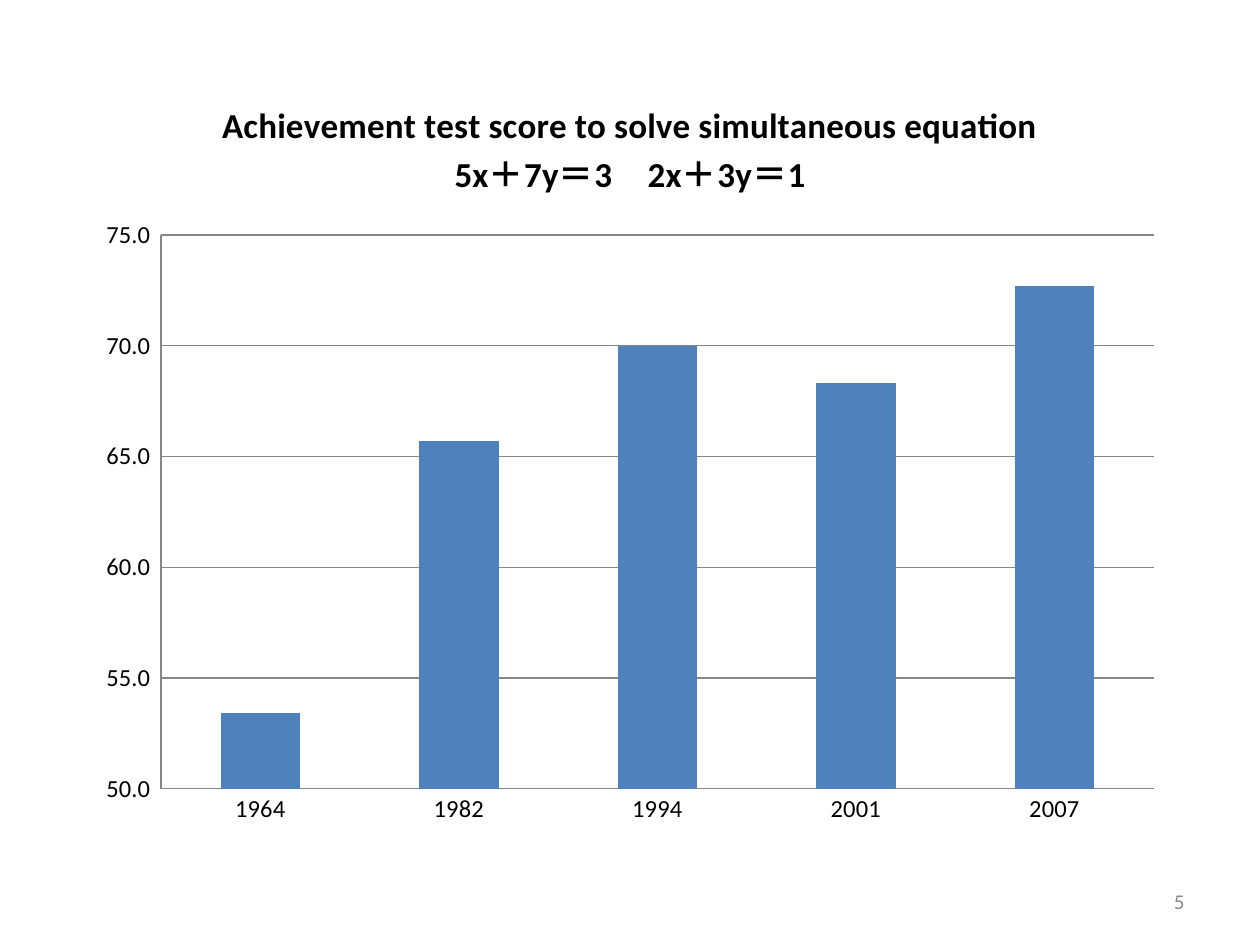
from pptx import Presentation
from pptx.chart.data import CategoryChartData
from pptx.dml.color import RGBColor
from pptx.enum.chart import XL_CHART_TYPE, XL_TICK_MARK
from pptx.enum.text import MSO_ANCHOR, PP_ALIGN
from pptx.util import Inches, Pt

WIDE, HIGH = 10, 7.5
FONT = "Calibri"
COLORS = {"text": "000000", "bar": "4F81BD", "line": "868686", "page": "8C8C8C"}
TITLE = ["Achievement test score to solve simultaneous equation", "5x＋7y＝3　2x＋3y＝1"]
SCORES = {"1964": 53.4, "1982": 65.7, "1994": 70, "2001": 68.3, "2007": 72.7}
PAGE = "5"
FORMAT = r"0.0_);[Red]\(0.0\)"
AREAS = {"chart": (0.067, 0.08, 0.866, 0.808), "page": (0.717, 0.927, 0.233, 0.053)}


def place(name):
    sides = (WIDE, HIGH, WIDE, HIGH)
    return [Inches(part * side) for part, side in zip(AREAS[name], sides)]


def color(name):
    return RGBColor.from_string(COLORS[name])


def style(font, size, name="text", bold=False):
    font.name, font.size, font.bold = FONT, Pt(size), bold
    font.color.rgb = color(name)


def rule(line):
    line.width = Pt(0.75)
    line.color.rgb = color("line")


def add_scores(slide):
    data = CategoryChartData(number_format="0.0")
    data.categories = list(SCORES)
    data.add_series("Series 1", list(SCORES.values()))
    kind = XL_CHART_TYPE.COLUMN_CLUSTERED
    chart = slide.shapes.add_chart(kind, *place("chart"), data).chart
    style(chart.font, 14)
    chart.has_legend = False

    chart.has_title = True
    frame = chart.chart_title.text_frame
    frame.text = "\n".join(TITLE)
    for para in frame.paragraphs:
        style(para.font, 20, bold=True)
        for run in para.runs:
            style(run.font, 20, bold=True)

    plot = chart.plots[0]
    plot.gap_width = 150
    plot.vary_by_categories = False
    fill = plot.series[0].format.fill
    fill.solid()
    fill.fore_color.rgb = color("bar")

    for axis in (chart.category_axis, chart.value_axis):
        axis.major_tick_mark = axis.minor_tick_mark = XL_TICK_MARK.NONE
        rule(axis.format.line)
    axis = chart.value_axis
    axis.minimum_scale, axis.maximum_scale, axis.major_unit = 50, 75, 5
    axis.has_major_gridlines = True
    rule(axis.major_gridlines.format.line)
    axis.tick_labels.number_format = FORMAT
    axis.tick_labels.number_format_is_linked = False


def add_page(slide):
    frame = slide.shapes.add_textbox(*place("page")).text_frame
    frame.word_wrap = True
    frame.vertical_anchor = MSO_ANCHOR.MIDDLE
    frame.text = PAGE
    para = frame.paragraphs[0]
    para.alignment = PP_ALIGN.RIGHT
    style(para.runs[0].font, 12, "page")


def main():
    deck = Presentation()
    deck.slide_width, deck.slide_height = Inches(WIDE), Inches(HIGH)
    slide = deck.slides.add_slide(deck.slide_layouts[6])
    add_scores(slide)
    add_page(slide)
    deck.save("out.pptx")


if __name__ == "__main__":
    main()
